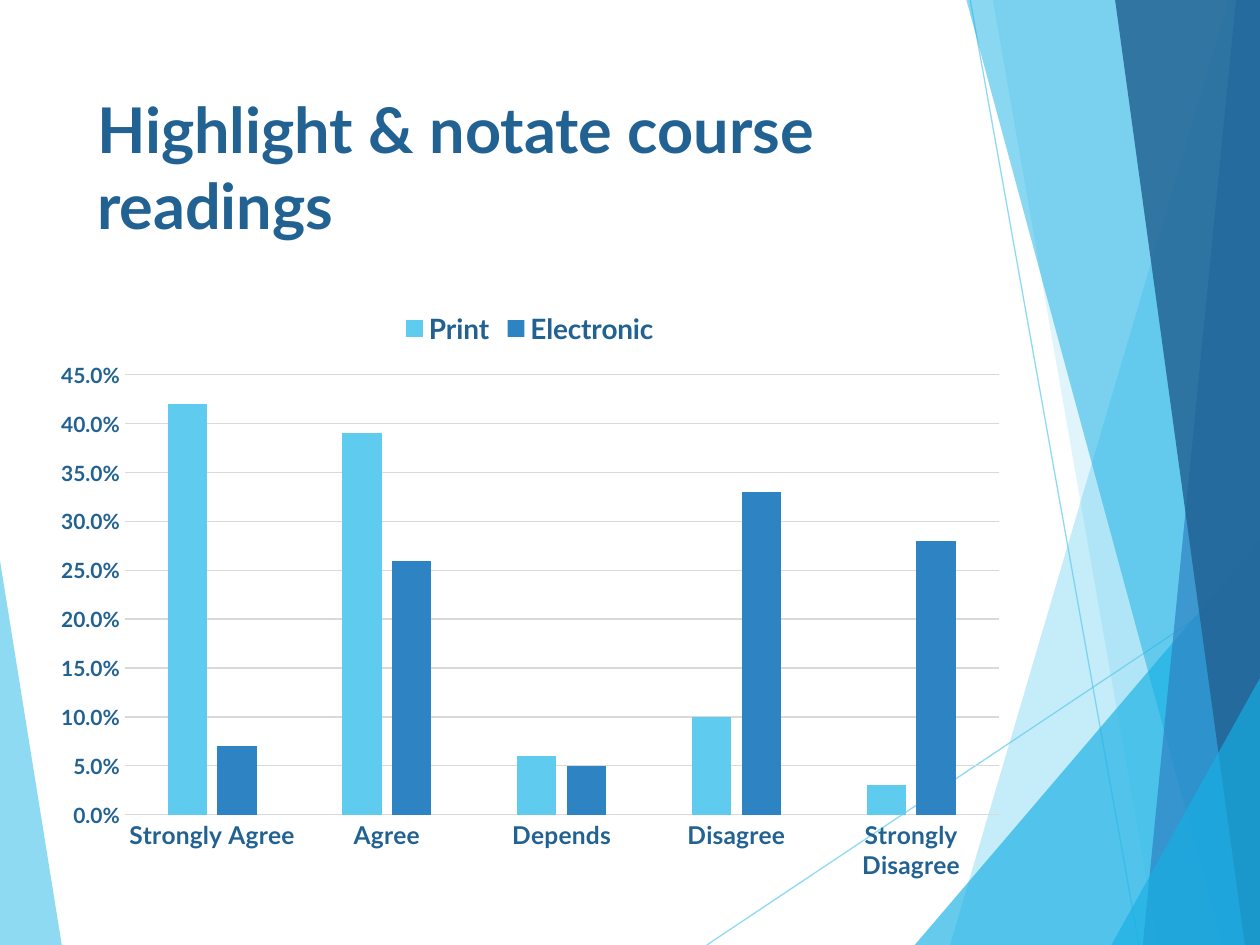
from dataclasses import dataclass

from lxml.etree import SubElement
from pptx import Presentation
from pptx.chart.data import CategoryChartData
from pptx.dml.color import RGBColor
from pptx.enum.chart import XL_CHART_TYPE as ChartType
from pptx.enum.chart import XL_LEGEND_POSITION as LegendPos
from pptx.enum.chart import XL_TICK_MARK as Tick
from pptx.enum.shapes import MSO_CONNECTOR as Connector
from pptx.enum.text import MSO_ANCHOR as Anchor
from pptx.enum.text import MSO_AUTO_SIZE as AutoSize
from pptx.enum.text import PP_ALIGN as Align
from pptx.oxml.ns import qn
from pptx.util import Inches, Pt

FONT = "Lato"
W, H = 10, 7.5
COLORS = {
    "sky": "5FCBEF",
    "cyan": "17B0E4",
    "blue": "2E83C3",
    "navy": "226292",
    "grid": "D9D9D9",
}


@dataclass
class Facet:
    points: list[tuple[float, float]]
    color: str
    opacity: int


@dataclass
class Ray:
    start: tuple[float, float]
    end: tuple[float, float]


@dataclass
class Series:
    name: str
    values: list[float]
    color: str


LEFT_FACET = Facet([(0, 4.45), (0.49, H), (0, H)], "sky", 70)
RAYS = [Ray((5.61, H), (W, 4.57)), Ray((7.7, 0), (9.04, H))]
RIGHT_FACETS = [
    Facet([(9.75, 0), (7.54, H), (W, H), (W, 0)], "sky", 36),
    Facet([(7.88, 0), (9.19, H), (W, H), (W, 0)], "sky", 20),
    Facet([(7.26, H), (W, 4.29), (W, H)], "cyan", 66),
    Facet([(7.67, 0), (9.7, H), (W, H), (W, 0)], "cyan", 50),
    Facet([(9.81, 0), (9.07, H), (W, H), (W, 0)], "blue", 70),
    Facet([(8.85, 0), (9.88, H), (W, H), (W, 0)], "navy", 82),
    Facet([(8.82, H), (W, 5.38), (W, H)], "cyan", 66),
]
ANSWERS = ["Strongly Agree", "Agree", "Depends", "Disagree", "Strongly Disagree"]
SERIES = [
    Series("Print", [0.42, 0.39, 0.06, 0.1, 0.03], "sky"),
    Series("Electronic", [0.07, 0.26, 0.05, 0.33, 0.28], "blue"),
]


def rgb(name: str) -> RGBColor:
    return RGBColor.from_string(COLORS[name])


def set_opacity(sp, percent: int) -> None:
    clr = next(sp._element.spPr.iter(qn("a:srgbClr")))
    SubElement(clr, qn("a:alpha")).set("val", str(percent * 1000))


def style_font(font, size: float) -> None:
    font.name = FONT
    font.size = Pt(size)
    font.bold = True
    font.color.rgb = rgb("navy")


def style_line(line, color: str) -> None:
    line.color.rgb = rgb(color)
    line.width = Pt(0.75)


def draw_facet(shapes, facet: Facet) -> None:
    points = [(Inches(x), Inches(y)) for x, y in facet.points]
    builder = shapes.build_freeform(*points[0])
    builder.add_line_segments(points[1:], close=True)
    sp = builder.convert_to_shape()
    sp.shadow.inherit = False
    sp.fill.solid()
    sp.fill.fore_color.rgb = rgb(facet.color)
    sp.line.fill.background()
    set_opacity(sp, facet.opacity)


def draw_ray(shapes, ray: Ray) -> None:
    ends = [Inches(v) for v in ray.start + ray.end]
    sp = shapes.add_connector(Connector.STRAIGHT, *ends)
    style_line(sp.line, "sky")
    set_opacity(sp, 70)
    SubElement(sp._element.spPr, qn("a:effectLst"))


def place_title(shapes, text: str) -> None:
    sp = shapes.title
    sp.left, sp.top = Inches(0.67), Inches(0.67)
    sp.width, sp.height = Inches(6.94), Inches(1.44)
    tf = sp.text_frame
    tf.text = text
    tf.word_wrap = True
    tf.auto_size = AutoSize.NONE
    tf.vertical_anchor = Anchor.TOP
    p = tf.paragraphs[0]
    p.alignment = Align.LEFT
    style_font(p.runs[0].font, 36)


def draw_chart(shapes) -> None:
    data = CategoryChartData(number_format="0.0%")
    data.categories = ANSWERS
    for series in SERIES:
        data.add_series(series.name, series.values)
    frame = shapes.add_chart(
        ChartType.COLUMN_CLUSTERED,
        Inches(0.33), Inches(2.36), Inches(7.75), Inches(4.72), data,
    )
    chart = frame.chart
    chart.has_title = False
    chart.font.name = FONT
    chart.font.size = Pt(10)

    # Columns
    plot = chart.plots[0]
    plot.gap_width = 219
    plot.overlap = -27
    plot.vary_by_categories = False
    for drawn, series in zip(plot.series, SERIES):
        drawn.format.fill.solid()
        drawn.format.fill.fore_color.rgb = rgb(series.color)

    # Axes
    cat_axis, val_axis = chart.category_axis, chart.value_axis
    for axis, size in ((cat_axis, 14), (val_axis, 12)):
        axis.major_tick_mark = axis.minor_tick_mark = Tick.NONE
        style_font(axis.tick_labels.font, size)
    style_line(cat_axis.format.line, "grid")
    val_axis.format.line.fill.background()
    val_axis.minimum_scale, val_axis.maximum_scale = 0, 0.45
    val_axis.major_unit = 0.05
    val_axis.has_major_gridlines = True
    style_line(val_axis.major_gridlines.format.line, "grid")
    val_axis.tick_labels.number_format = "0.0%"
    val_axis.tick_labels.number_format_is_linked = False

    # Legend
    chart.has_legend = True
    chart.legend.position = LegendPos.TOP
    chart.legend.include_in_layout = False
    style_font(chart.legend.font, 16)


def main() -> None:
    prs = Presentation()
    prs.slide_width, prs.slide_height = Inches(W), Inches(H)
    shapes = prs.slides.add_slide(prs.slide_layouts[5]).shapes

    # Background decoration
    draw_facet(shapes, LEFT_FACET)
    for ray in RAYS:
        draw_ray(shapes, ray)
    for facet in RIGHT_FACETS:
        draw_facet(shapes, facet)

    # Content
    place_title(shapes, "Highlight & notate course readings")
    draw_chart(shapes)
    prs.save("out.pptx")


if __name__ == "__main__":
    main()
